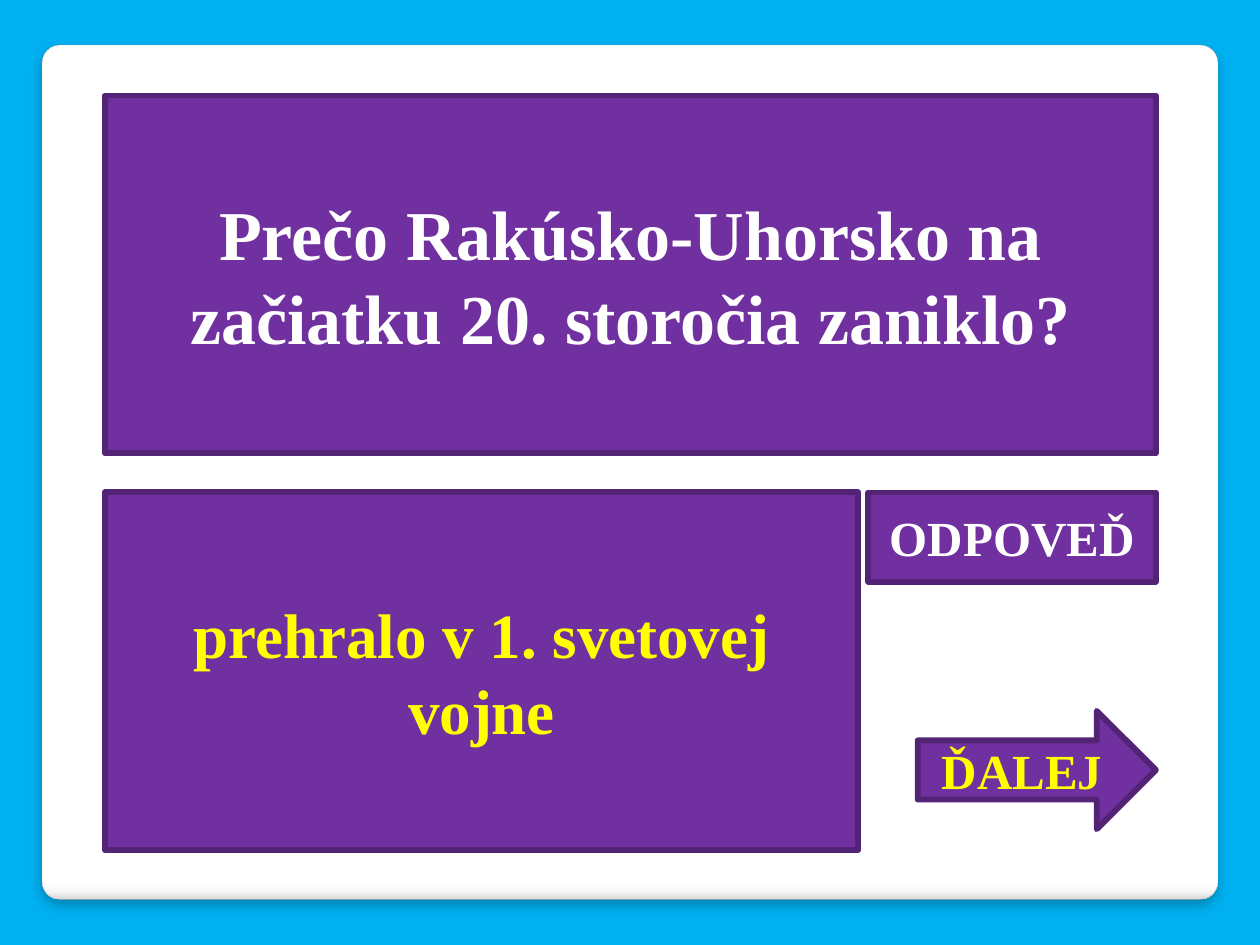
import lxml.etree
import pptx
import pptx.dml.color
import pptx.enum.shapes
import pptx.enum.text
import pptx.oxml
import pptx.oxml.ns
import pptx.util

Pt = pptx.util.Pt
RGBColor = pptx.dml.color.RGBColor
SHAPE = pptx.enum.shapes.MSO_SHAPE

SKY = RGBColor(0x00, 0xB0, 0xF0)
PURPLE = RGBColor(0x70, 0x30, 0xA0)
DARK_PURPLE = RGBColor(0x53, 0x24, 0x76)
WHITE = RGBColor(0xFF, 0xFF, 0xFF)
YELLOW = RGBColor(0xFF, 0xFF, 0x00)
GREY = RGBColor(0xA4, 0xA4, 0xA4)
LIGHT_GREY = RGBColor(0xF7, 0xF7, 0xF7)
EDGE_GREY = RGBColor(0xDA, 0xDA, 0xDA)

LEFT, RIGHT = 60, 660.5
QUESTION_TOP, ANSWER_TOP = 54.6, 281.4
BOX_HEIGHT = 204.5
BUTTON_WIDTH, ARROW_WIDTH = 164.3, 136.1

presentation = pptx.Presentation()
presentation.slide_width = Pt(720)
presentation.slide_height = Pt(540)
slide = presentation.slides.add_slide(presentation.slide_layouts[6])
slide.background.fill.solid()
slide.background.fill.fore_color.rgb = SKY

panel = slide.shapes.add_shape(SHAPE.ROUNDED_RECTANGLE, Pt(24), Pt(25.7), Pt(672), Pt(488.2))
panel.adjustments[0] = 0.021
panel.line.color.rgb = GREY
panel.line.width = Pt(0.16)
panel.fill.gradient()
panel.fill.gradient_angle = 270
stop_list = panel.fill.gradient_stops[0]._gs.getparent()
for stop in list(stop_list):
    stop_list.remove(stop)
for percent, color in [(0, WHITE), (98, WHITE), (99, LIGHT_GREY), (100, EDGE_GREY)]:
    stop = lxml.etree.SubElement(stop_list, pptx.oxml.ns.qn("a:gs"), pos=str(percent * 1000))
    lxml.etree.SubElement(stop, pptx.oxml.ns.qn("a:srgbClr"), val=str(color))
panel._element.spPr.append(pptx.oxml.parse_xml(
    f'<a:effectLst {pptx.oxml.ns.nsdecls("a")}>'
    f'<a:outerShdw blurRad="{Pt(6)}" dist="{Pt(4)}" dir="5400000" algn="t" rotWithShape="0">'
    '<a:srgbClr val="000000"><a:alpha val="25000"/></a:srgbClr>'
    '</a:outerShdw></a:effectLst>'))

boxes = [
    (SHAPE.RECTANGLE, LEFT, QUESTION_TOP, RIGHT - LEFT, BOX_HEIGHT,
     "Prečo Rakúsko-Uhorsko na začiatku 20. storočia zaniklo?", 40, WHITE),
    (SHAPE.RECTANGLE, LEFT, ANSWER_TOP, 430.3, BOX_HEIGHT,
     "prehralo v 1. svetovej vojne", 36, YELLOW),
    (SHAPE.RECTANGLE, RIGHT - BUTTON_WIDTH, ANSWER_TOP, BUTTON_WIDTH, 51,
     "ODPOVEĎ", 28, WHITE),
    (SHAPE.RIGHT_ARROW, RIGHT - ARROW_WIDTH, 406.2, ARROW_WIDTH, 67.6,
     "ĎALEJ", 28, YELLOW),
]
for kind, left, top, width, height, text, size, color in boxes:
    shape = slide.shapes.add_shape(kind, Pt(left), Pt(top), Pt(width), Pt(height))
    shape.shadow.inherit = False
    shape.fill.solid()
    shape.fill.fore_color.rgb = PURPLE
    shape.line.color.rgb = DARK_PURPLE
    shape.line.width = Pt(3.35)
    text_frame = shape.text_frame
    text_frame.word_wrap = True
    text_frame.vertical_anchor = pptx.enum.text.MSO_ANCHOR.MIDDLE
    paragraph = text_frame.paragraphs[0]
    paragraph.text = text
    paragraph.alignment = pptx.enum.text.PP_ALIGN.CENTER
    paragraph.font.name = "Times New Roman"
    paragraph.font.size = Pt(size)
    paragraph.font.bold = True
    paragraph.font.color.rgb = color

presentation.save("out.pptx")
